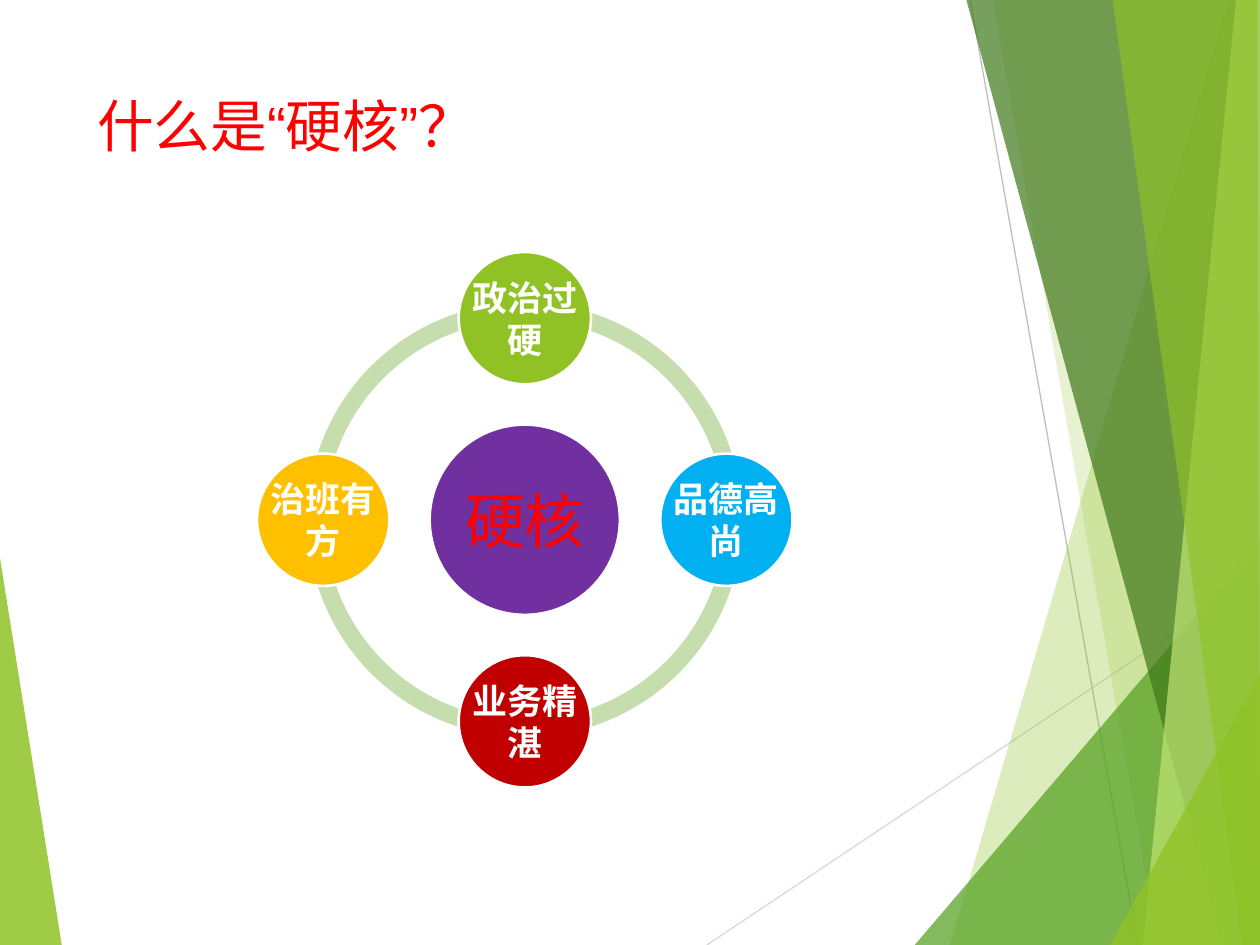
import pptx
import pptx.util
import pptx.oxml
import pptx.oxml.ns
from pptx.dml.color import RGBColor
from pptx.enum.shapes import MSO_CONNECTOR, MSO_SHAPE
from pptx.enum.text import MSO_ANCHOR, PP_ALIGN

PX = 9144
WIDE, HIGH = 1000, 750
WHITE = RGBColor(0xFF, 0xFF, 0xFF)
RED = RGBColor(0xFF, 0x00, 0x00)
LIME = RGBColor(0x90, 0xC2, 0x26)
GREEN = RGBColor(0x54, 0xA0, 0x21)
FOREST = RGBColor(0x3F, 0x78, 0x19)
PALE = RGBColor(0xC0, 0xE4, 0x74)
RING = RGBColor(0xC6, 0xDD, 0xAD)
PURPLE = RGBColor(0x70, 0x30, 0xA0)
BLUE = RGBColor(0x00, 0xB0, 0xF0)
CRIMSON = RGBColor(0xC0, 0x00, 0x00)
GOLD = RGBColor(0xFF, 0xC0, 0x00)
SILVER = RGBColor(0xD9, 0xD9, 0xD9)
GREY = RGBColor(0xBF, 0xBF, 0xBF)

TITLE = "什么是“硬核”？"
HUB = ("硬核", PURPLE)
NODES = [
    ("政治过硬", LIME, 0, -1),
    ("品德高尚", BLUE, 1, 0),
    ("业务精湛", CRIMSON, 0, 1),
    ("治班有方", GOLD, -1, 0),
]
LINES = [
    ((561, 750), (1000, 457), SILVER),
    ((770, 0), (903, 750), GREY),
]
EDGE = (WIDE, HIGH)
TOP = (WIDE, 0)
SHARDS = [
    ([(0, 443), (49, 750), (0, 750)], LIME, 85),
    ([(975, 0), (754, 750), EDGE, TOP], LIME, 30),
    ([(788, 0), (919, 750), EDGE, TOP], LIME, 20),
    ([(726, 750), (1000, 429), EDGE], GREEN, 72),
    ([(767, 0), (970, 750), EDGE, TOP], FOREST, 70),
    ([(981, 0), (907, 750), EDGE, TOP], PALE, 70),
    ([(883, 0), (986, 750), EDGE, (998, 0)], LIME, 65),
    ([(881, 750), (1000, 535), EDGE], LIME, 80),
]
MID_X, MID_Y = 416.5, 412.5
ORBIT, ARC, CORE, DISC = 160, 345, 151, 105


def scale(*sizes):
    return [round(size * PX) for size in sizes]


def square(size, x=MID_X, y=MID_Y):
    return scale(x - size / 2, y - size / 2, size, size)


def paint(shape, color):
    shape.shadow.inherit = False
    shape.fill.solid()
    shape.fill.fore_color.rgb = color
    shape.line.fill.background()


def style(run, face, size, color, bold=False):
    font = run.font
    font.name, font.size, font.bold = face, pptx.util.Pt(size), bold
    font.color.rgb = color
    east = pptx.oxml.parse_xml(
        f'<a:ea {pptx.oxml.ns.nsdecls("a")} typeface="{face}"/>')
    run._r.rPr.find(pptx.oxml.ns.qn("a:latin")).addnext(east)


def add_shard(shapes, points, color, alpha):
    pen = shapes.build_freeform(*points[0], scale=PX)
    pen.add_line_segments(points[1:], close=True)
    shape = pen.convert_to_shape()
    paint(shape, color)
    tint = shape.fill._xPr.find(".//" + pptx.oxml.ns.qn("a:srgbClr"))
    tint.append(pptx.oxml.parse_xml(
        f'<a:alpha {pptx.oxml.ns.nsdecls("a")} val="{alpha * 1000}"/>'))


def add_line(shapes, start, end, color):
    line = shapes.add_connector(MSO_CONNECTOR.STRAIGHT, *scale(*start, *end))
    line.line.color.rgb = color
    line.line.width = pptx.util.Pt(0.75)
    line._element.spPr.append(pptx.oxml.parse_xml(
        f'<a:effectLst {pptx.oxml.ns.nsdecls("a")}/>'))


def add_disc(shapes, text, color, box, inset, size, ink, bold):
    disc = shapes.add_shape(MSO_SHAPE.OVAL, *box)
    paint(disc, color)
    disc.line.color.rgb = WHITE
    disc.line.width = pptx.util.Pt(1.5)
    frame = shapes.add_textbox(*box).text_frame
    frame.word_wrap = True
    frame.vertical_anchor = MSO_ANCHOR.MIDDLE
    frame.margin_left = frame.margin_right = inset * PX
    frame.margin_top = frame.margin_bottom = inset * PX
    para = frame.paragraphs[0]
    para.alignment = PP_ALIGN.CENTER
    run = para.add_run()
    run.text = text
    style(run, "Lato", size, ink, bold)


def main():
    deck = pptx.Presentation()
    deck.slide_width, deck.slide_height = scale(WIDE, HIGH)
    slide = deck.slides.add_slide(deck.slide_layouts[5])
    shapes = slide.shapes

    add_shard(shapes, *SHARDS[0])
    for line in LINES:
        add_line(shapes, *line)
    for shard in SHARDS[1:]:
        add_shard(shapes, *shard)

    title = shapes.title
    title.left, title.top, title.width, title.height = scale(67, 67, 392, 58)
    frame = title.text_frame
    frame.word_wrap = True
    frame.vertical_anchor = MSO_ANCHOR.TOP
    para = frame.paragraphs[0]
    para.alignment = PP_ALIGN.LEFT
    run = para.add_run()
    run.text = TITLE
    style(run, "Arial", 32.4, RED)

    for start in (162, 0, 54, 108):
        arc = shapes.add_shape(MSO_SHAPE.BLOCK_ARC, *square(ARC))
        paint(arc, RING)
        for i, value in enumerate((start, (start + 54) % 216, 0.04)):
            arc.adjustments[i] = value

    add_disc(shapes, *HUB, square(CORE), 5, 34, RED, False)
    for text, color, across, down in NODES:
        box = square(DISC, MID_X + across * ORBIT, MID_Y + down * ORBIT)
        add_disc(shapes, text, color, box, 3, 20, WHITE, True)

    deck.save("out.pptx")


if __name__ == "__main__":
    main()
